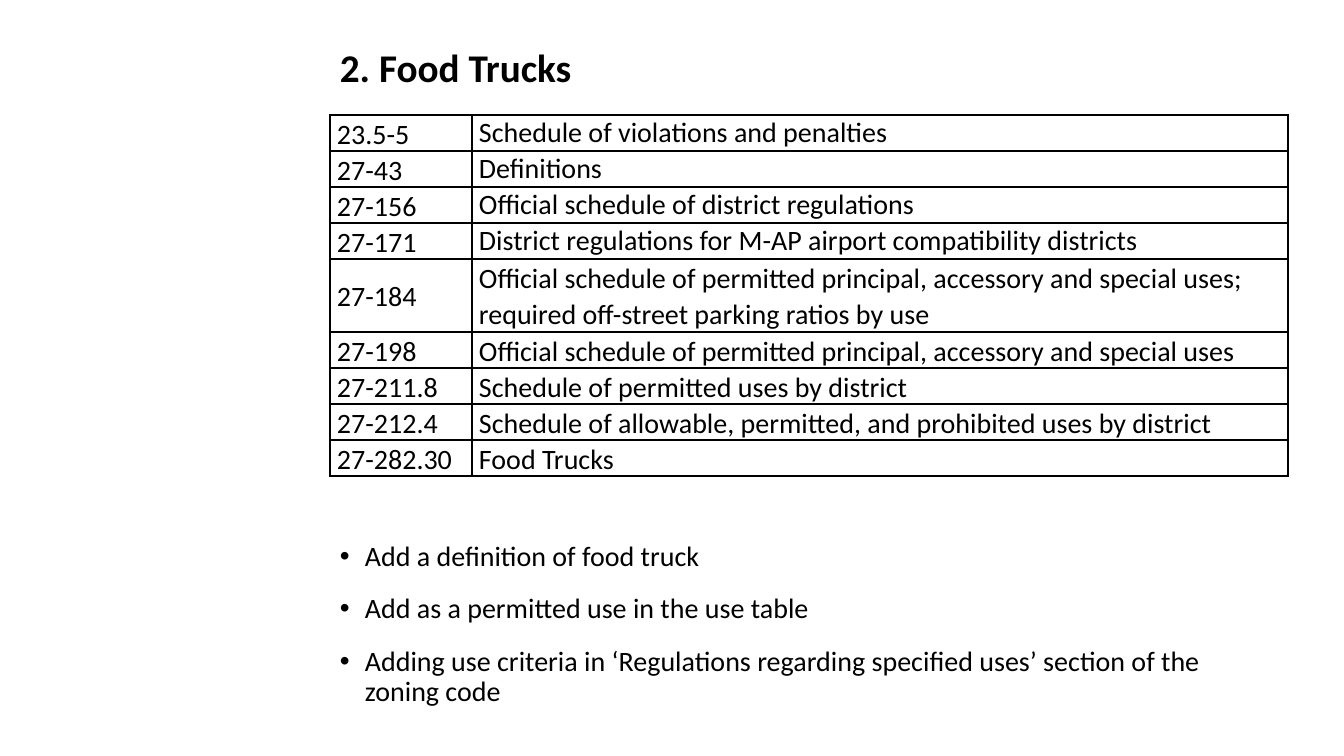
from lxml.etree import SubElement
from pptx import Presentation
from pptx.dml.color import RGBColor
from pptx.enum.text import MSO_ANCHOR as Anchor
from pptx.oxml.ns import qn
from pptx.util import Pt

PX = 12192000 / 1344
BLACK, WHITE = "000000", "FFFFFF"
LEFT, WIDTH = 330, 958


def px(count):
    return round(count * PX)


def style(para, size, spacing, bold=False):
    para.line_spacing = spacing
    for span in para.runs:
        span.font.name = "Calibri"
        span.font.size = Pt(size)
        span.font.bold = bold
        span.font.color.rgb = RGBColor.from_string(BLACK)


deck = Presentation()
deck.slide_width, deck.slide_height = px(1344), px(756)
page = deck.slides.add_slide(deck.slide_layouts[6])

title = page.shapes.add_textbox(px(LEFT), px(21), px(899), px(98))
title.fill.solid()
title.fill.fore_color.rgb = RGBColor.from_string(WHITE)
title.text_frame.word_wrap = True
title.text_frame.vertical_anchor = Anchor.MIDDLE
title.text_frame.text = "2. Food Trucks"
style(title.text_frame.paragraphs[0], 28, 0.9, bold=True)

sections = [
    ("23.5-5", "Schedule of violations and penalties"),
    ("27-43", "Definitions"),
    ("27-156", "Official schedule of district regulations"),
    ("27-171", "District regulations for M-AP airport compatibility districts"),
    ("27-184", "Official schedule of permitted principal, accessory and special uses; "
               "required off-street parking ratios by use"),
    ("27-198", "Official schedule of permitted principal, accessory and special uses"),
    ("27-211.8", "Schedule of permitted uses by district"),
    ("27-212.4", "Schedule of allowable, permitted, and prohibited uses by district"),
    ("27-282.30", "Food Trucks"),
]
TALL_ROW = 4
SINGLE_SPACED_ROWS = 4
frame = page.shapes.add_table(len(sections), 2, px(LEFT), px(115), px(WIDTH), px(355))
table = frame.table
table.first_row = table.horz_banding = False
table.columns[0].width, table.columns[1].width = px(142), px(WIDTH - 142)

for row, section in enumerate(sections):
    table.rows[row].height = px(73 if row == TALL_ROW else 36)
    for column, words in enumerate(section):
        cell = table.cell(row, column)
        cell.margin_left = cell.margin_right = px(7)
        cell.margin_top = cell.margin_bottom = 0
        cell.vertical_anchor = Anchor.MIDDLE
        for side in ("a:lnL", "a:lnR", "a:lnT", "a:lnB"):
            edge = SubElement(cell._tc.get_or_add_tcPr(), qn(side), w=str(Pt(1)))
            paint = SubElement(edge, qn("a:solidFill"))
            SubElement(paint, qn("a:srgbClr"), val=BLACK)
        cell.fill.solid()
        cell.fill.fore_color.rgb = RGBColor.from_string(WHITE)
        cell.text_frame.text = words
        single = column == 1 and row < SINGLE_SPACED_ROWS
        style(cell.text_frame.paragraphs[0], 20, 1.0 if single else 1.07)

changes = [
    "Add a definition of food truck",
    "Add as a permitted use in the use table",
    "Adding use criteria in ‘Regulations regarding specified uses’ section of the zoning code",
]
box = page.shapes.add_textbox(px(LEFT), px(483), px(WIDTH), px(252))
box.fill.solid()
box.fill.fore_color.rgb = RGBColor.from_string(WHITE)
box.text_frame.word_wrap = True
box.text_frame.margin_top = px(59)
box.text_frame.text = "\n".join(changes)
for index, para in enumerate(box.text_frame.paragraphs):
    properties = para._p.get_or_add_pPr()
    properties.set("marL", str(px(25)))
    properties.set("indent", str(px(-25)))
    SubElement(properties, qn("a:buFont"), typeface="Arial")
    SubElement(properties, qn("a:buChar"), char="•")
    para.space_before = Pt(10 if index else 0)
    para.space_after = Pt(6)
    style(para, 20, 0.9)

deck.save("out.pptx")
